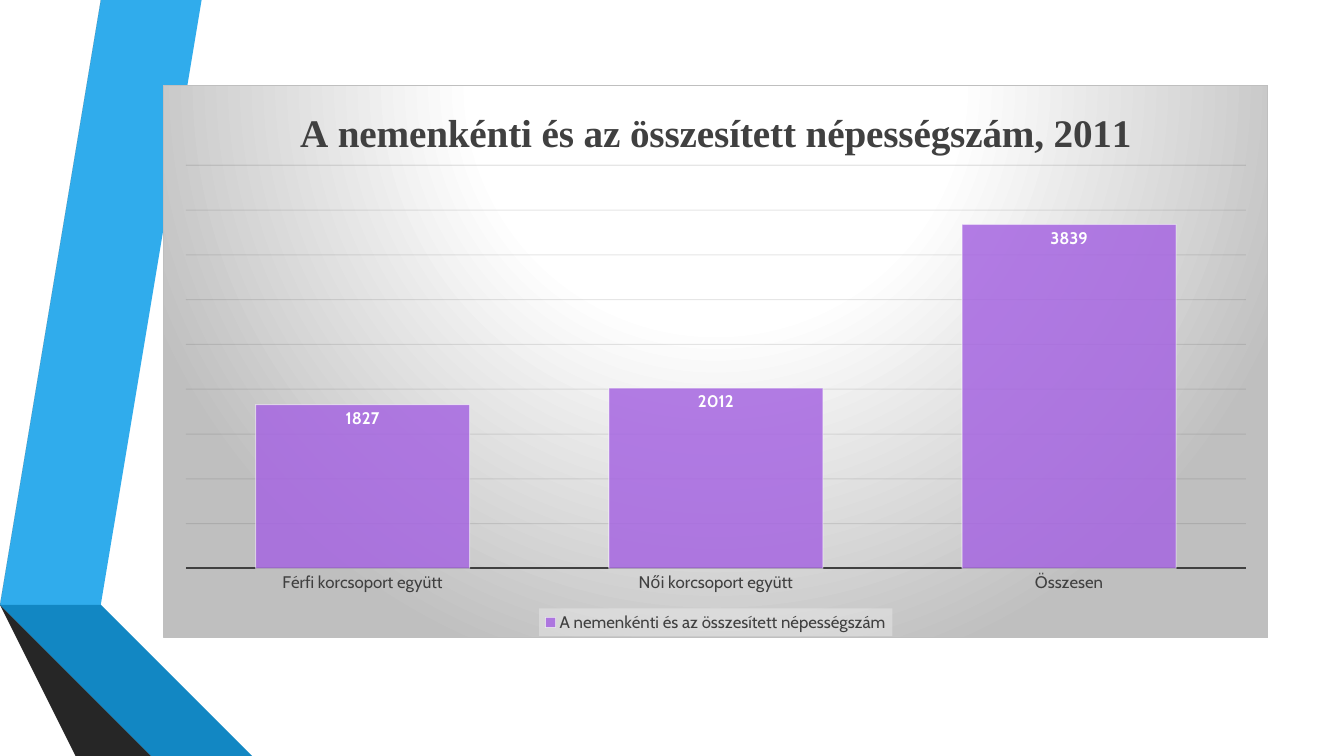
from dataclasses import dataclass

from lxml import etree
from pptx import Presentation
from pptx import util as u
from pptx.chart.data import CategoryChartData
from pptx.dml.color import RGBColor
from pptx.enum import chart as kinds
from pptx.oxml.ns import nsdecls, qn


@dataclass(frozen=True)
class Theme:
    """Colours, fonts and type sizes of the slide."""
    ink: str = "404040"
    grid: str = "0D0D0D"
    bar: str = "A666E1"
    white: str = "FFFFFF"
    edge: str = "BFBFBF"
    legend: str = "F2F2F2"
    body_font: str = "Cabin"
    title_font: str = "Times New Roman"
    body_size: int = 12
    title_size: int = 28


THEME = Theme()
TITLE = "A nemenkénti és az összesített népességszám, 2011"
SERIES = "A nemenkénti és az összesített népességszám"
POPULATION = {
    "Férfi korcsoport együtt": 1827,
    "Női korcsoport együtt": 2012,
    "Összesen": 3839,
}
RIBBONS = [
    ("30ACEC", [(0.5, 5.78), (0.77, 5.83), (1.73, 0), (1.45, 0)]),
    ("595959", [(1.39, 0), (1.11, 0), (0.16, 5.73), (0.44, 5.77)]),
    ("262626", [(0.16, 5.73), (1.45, 7.5), (1.51, 7.5)]),
    ("0C5A82", [(0.5, 5.79), (2.08, 7.5), (2.14, 7.5)]),
    ("1287C3", [(0.5, 5.78), (2.14, 7.5), (2.83, 7.5), (0.77, 5.83)]),
    ("404040", [(0.16, 5.73), (1.51, 7.5), (2.02, 7.5), (0.48, 5.83), (0.44, 5.77)]),
]


def style_font(font, colour, size=THEME.body_size, name=THEME.body_font, bold=False):
    """Set the typeface, size, weight and colour of a font."""
    font.name, font.size, font.bold = name, u.Pt(size), bold
    font.color.rgb = RGBColor.from_string(colour)


def style_line(line, colour, width):
    """Set the colour and the width in points of a line."""
    line.color.rgb = RGBColor.from_string(colour)
    line.width = u.Pt(width)


def fade(element, colour, percent):
    """Give every use of a colour inside the element an opacity."""
    for node in element.iter(qn("a:srgbClr")):
        if node.get("val") == colour:
            etree.SubElement(node, qn("a:alpha")).set("val", str(percent * 1000))


def make_layout(left, top, width, height, inner=False):
    """Return a manual chart layout in fractions of the chart."""
    target = '<c:layoutTarget val="inner"/>' if inner else ""
    return etree.fromstring(
        f'<c:layout {nsdecls("c")}><c:manualLayout>{target}'
        '<c:xMode val="edge"/><c:yMode val="edge"/>'
        f'<c:x val="{left}"/><c:y val="{top}"/><c:w val="{width}"/><c:h val="{height}"/>'
        '</c:manualLayout></c:layout>')


def draw_ribbons(slide, left, top):
    """Draw the folded ribbons from the given corner."""
    for colour, points in RIBBONS:
        start, *others = [(left + x, top + y) for x, y in points]
        outline = slide.shapes.build_freeform(*start, scale=u.Inches(1))
        outline.add_line_segments(others, close=True)
        ribbon = outline.convert_to_shape()
        ribbon.shadow.inherit = False
        ribbon.fill.solid()
        ribbon.fill.fore_color.rgb = RGBColor.from_string(colour)
        ribbon.line.fill.background()


def paint_background(chart):
    """Fill the chart area with a radial gradient and a thin border."""
    stops = [(0, THEME.white), (39, THEME.white), (100, THEME.edge)]
    stop_xml = "".join(f'<a:gs pos="{place * 1000}"><a:srgbClr val="{colour}"/></a:gs>'
                       for place, colour in stops)
    area = etree.fromstring(
        f'<c:spPr {nsdecls("c", "a")}><a:gradFill><a:gsLst>{stop_xml}</a:gsLst>'
        '<a:path path="circle"><a:fillToRect l="50000" t="-80000" r="50000" b="180000"/>'
        f'</a:path></a:gradFill><a:ln w="{u.Pt(0.75)}"><a:solidFill>'
        f'<a:srgbClr val="{THEME.edge}"/></a:solidFill></a:ln></c:spPr>')
    chart.element.find(qn("c:chart")).addnext(area)


def style_axes(chart):
    """Format the category axis, the hidden value axis and its gridlines."""
    categories, values = chart.category_axis, chart.value_axis
    categories.major_tick_mark = kinds.XL_TICK_MARK.NONE
    style_font(categories.tick_labels.font, THEME.ink)
    style_line(categories.format.line, THEME.ink, 1.5)
    values.minimum_scale, values.maximum_scale, values.major_unit = 0, 4500, 500
    values.has_major_gridlines = True
    style_line(values.major_gridlines.format.line, THEME.grid, 0.75)
    fade(next(chart.element.iter(qn("c:majorGridlines"))), THEME.grid, 10)
    values.visible = False


def style_bars(chart):
    """Format the columns and their value labels."""
    plot = chart.plots[0]
    plot.gap_width, plot.vary_by_categories = 65, False
    bars = plot.series[0]
    bars.format.fill.solid()
    bars.format.fill.fore_color.rgb = RGBColor.from_string(THEME.bar)
    style_line(bars.format.line, THEME.white, 0.75)
    series = next(chart.element.iter(qn("c:ser")))
    fade(series, THEME.bar, 85)
    fade(series, THEME.white, 50)
    labels = bars.data_labels
    labels.show_value = True
    labels.position = kinds.XL_LABEL_POSITION.INSIDE_END
    style_font(labels.font, THEME.white, bold=True)


def style_legend(chart):
    """Place the legend at the bottom on a pale translucent panel."""
    chart.has_legend = True
    chart.legend.position = kinds.XL_LEGEND_POSITION.BOTTOM
    chart.legend.include_in_layout = False
    style_font(chart.legend.font, THEME.ink)
    legend = next(chart.element.iter(qn("c:legend")))
    for old in legend.findall(qn("c:layout")):
        legend.remove(old)
    legend.find(qn("c:legendPos")).addnext(make_layout(0.34, 0.95, 0.32, 0.05))
    panel = etree.fromstring(
        f'<c:spPr {nsdecls("c", "a")}><a:solidFill>'
        f'<a:srgbClr val="{THEME.legend}"/></a:solidFill></c:spPr>')
    fade(panel, THEME.legend, 39)
    legend.find(qn("c:overlay")).addnext(panel)


def draw_chart(slide, left, top, width, height):
    """Draw the population chart in the given box."""
    data = CategoryChartData()
    data.categories = list(POPULATION)
    data.add_series(SERIES, list(POPULATION.values()))
    box = [u.Inches(length) for length in (left, top, width, height)]
    chart = slide.shapes.add_chart(kinds.XL_CHART_TYPE.COLUMN_CLUSTERED, *box, data).chart
    style_font(chart.font, "000000", 10)
    chart.has_title = True
    span = chart.chart_title.text_frame.paragraphs[0].add_run()
    span.text = TITLE
    style_font(span.font, THEME.ink, THEME.title_size, THEME.title_font, True)
    chart.chart_title.include_in_layout = False
    style_axes(chart)
    style_bars(chart)
    style_legend(chart)
    area = next(chart.element.iter(qn("c:plotArea")))
    for old in area.findall(qn("c:layout")):
        area.remove(old)
    area.insert(0, make_layout(0.02, 0.145, 0.96, 0.73, inner=True))
    paint_background(chart)


def main():
    """Build the deck and save it."""
    deck = Presentation()
    deck.slide_width, deck.slide_height = u.Inches(13.33), u.Inches(7.5)
    page = deck.slides.add_slide(deck.slide_layouts[6])
    draw_ribbons(page, 0, 0)
    draw_chart(page, 1.62, 0.84, 10.96, 5.49)
    deck.save("out.pptx")


if __name__ == "__main__":
    main()
